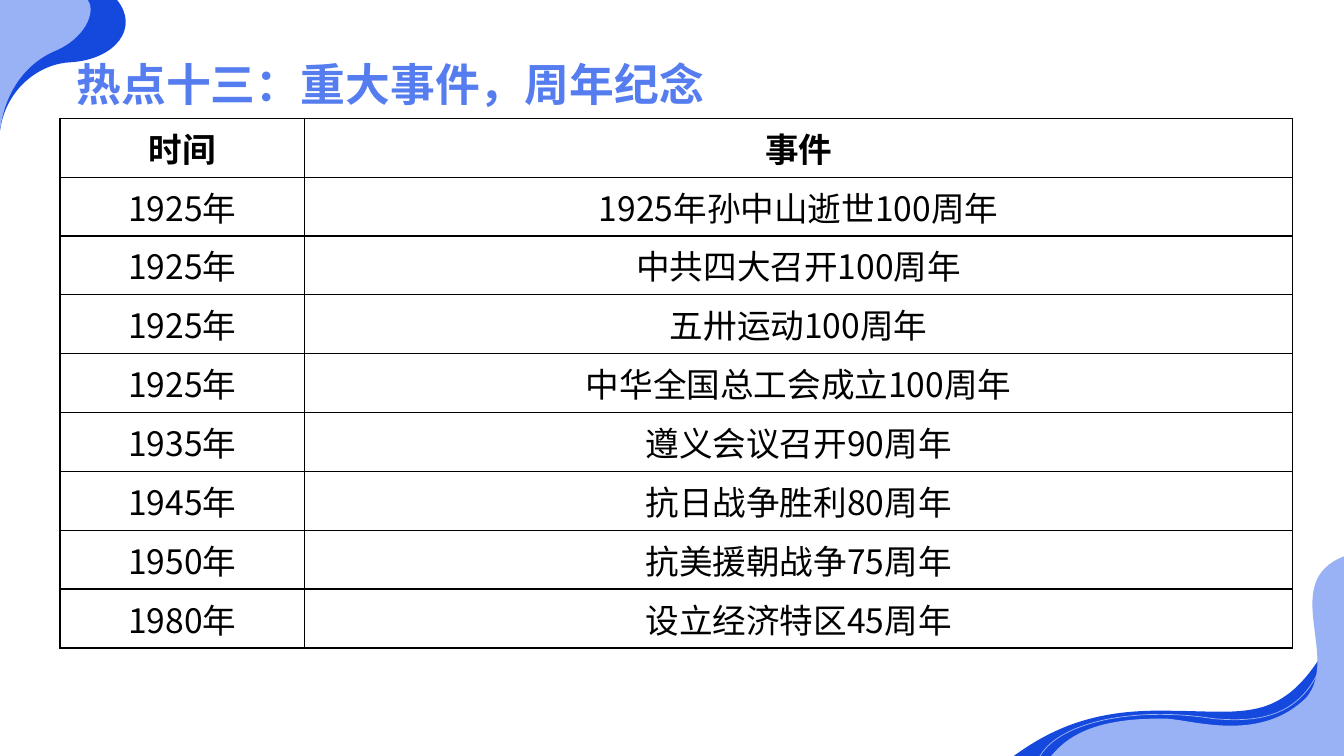
"""Build a slide with a table of historical anniversaries framed by blue waves."""
from lxml import etree
from pptx import Presentation
from pptx import util as u
from pptx.dml.color import RGBColor
from pptx.enum import text
from pptx.oxml import ns

BLUE = RGBColor(0x15, 0x49, 0xDE)
PALE_BLUE = RGBColor(0x99, 0xB1, 0xF5)
TITLE_BLUE = RGBColor(0x55, 0x7D, 0xEF)
BLACK = RGBColor(0, 0, 0)
WHITE = RGBColor(0xFF, 0xFF, 0xFF)
CJK_FONT = "Noto Sans CJK SC"

WAVES = [
    (BLUE, 3.18, (0, 0), [[(2.95, 0)], [(3.53, 0.71), (2.9, 1.5), (1.78, 1.57)],
                          [(1.02, 1.6), (0.15, 2.21), (0, 3.3)], [(0, 0)]]),
    (PALE_BLUE, 2.29, (0, 0), [[(2.21, 0)], [(2.44, 0.3), (2.13, 0.99), (1.35, 1.3)],
                               [(0.74, 1.57), (0.13, 2.21), (0, 3.3)], [(0, 0)]]),
    (BLUE, 8.32, (29.36, 17.91), [[(31.62, 17.91), (32.49, 18.36), (33.87, 15.47)],
                                  [(33.87, 19.05)], [(25.55, 19.05)],
                                  [(26.59, 18.29), (27.69, 17.88), (29.36, 17.91)]]),
    (None, 7.04, (26.21, 19.05), [[(26.75, 18.14), (28.73, 17.81), (30.58, 18.11)],
                                  [(31.52, 18.19), (32.69, 18.16), (33.25, 16.87)]]),
    (PALE_BLUE, 7.38, (29.41, 18.11), [[(30.12, 18.16), (31.78, 18.71), (32.92, 17.58)],
                                       [(33.78, 16.56), (32.23, 14.66), (33.87, 14.02)],
                                       [(33.87, 19.05)], [(26.49, 19.05)],
                                       [(26.95, 18.49), (27.71, 18.08), (29.41, 18.11)]]),
]

EVENTS = [
    ("时间", "事件"),
    ("1925年", "1925年孙中山逝世100周年"),
    ("1925年", "中共四大召开100周年"),
    ("1925年", "五卅运动100周年"),
    ("1925年", "中华全国总工会成立100周年"),
    ("1935年", "遵义会议召开90周年"),
    ("1945年", "抗日战争胜利80周年"),
    ("1950年", "抗美援朝战争75周年"),
    ("1980年", "设立经济特区45周年"),
]


def write(frame, words, size, color, font=CJK_FONT, bold=False,
          align=text.PP_ALIGN.LEFT):
    """Fill a text frame with one formatted paragraph."""
    para = frame.paragraphs[0]
    para.alignment = align
    span = para.add_run()
    span.text = words
    span.font.size = u.Pt(size)
    span.font.bold = bold
    span.font.name = font
    span.font.color.rgb = color
    east_asian = etree.SubElement(span.font._element, ns.qn("a:ea"))
    east_asian.set("typeface", CJK_FONT)


def add_wave(page, width, start, segments, closed):
    """Add an outline of straight lines and true cubic curves, given in cm."""
    builder = page.shapes.build_freeform(u.Cm(start[0]), u.Cm(start[1]))
    ends = [segment[-1] for segment in segments]
    builder.add_line_segments([(u.Cm(x), u.Cm(y)) for x, y in ends], close=closed)
    wave = builder.convert_to_shape()
    wave.shadow.inherit = False
    wave.width = u.Cm(width)
    outline = wave.element.find(".//" + ns.qn("a:path"))
    outline.set("w", str(wave.width))
    for line, segment in zip(outline.findall(ns.qn("a:lnTo")), segments):
        if len(segment) == 3:
            curve = etree.Element(ns.qn("a:cubicBezTo"))
            for x, y in segment:
                etree.SubElement(curve, ns.qn("a:pt"), x=str(u.Cm(x) - wave.left),
                                 y=str(u.Cm(y) - wave.top))
            outline.replace(line, curve)
    return wave


deck = Presentation()
deck.slide_width, deck.slide_height = u.Cm(33.87), u.Cm(19.05)
page = deck.slides.add_slide(deck.slide_layouts[5])

for color, width, start, segments in WAVES:
    wave = add_wave(page, width, start, segments, closed=color is not None)
    if color is not None:
        wave.fill.solid()
        wave.fill.fore_color.rgb = color
        wave.line.fill.background()
    else:
        wave.fill.background()
        wave.line.width = u.Pt(0.5)
        wave.line.color.rgb = WHITE
        tint = wave.line._ln.find(".//" + ns.qn("a:srgbClr"))
        etree.SubElement(tint, ns.qn("a:alpha")).set("val", "60000")

title = page.shapes.title
title.element.getparent().append(title.element)
title.left, title.top = u.Cm(1.93), u.Cm(0.79)
title.width, title.height = u.Cm(25.12), u.Cm(2)
frame = title.text_frame
frame.margin_left = frame.margin_right = frame.margin_top = frame.margin_bottom = 0
frame.vertical_anchor = text.MSO_ANCHOR.BOTTOM
frame.auto_size = text.MSO_AUTO_SIZE.NONE
frame.word_wrap = True
write(frame, "热点十三：重大事件，周年纪念", 32, TITLE_BLUE, font="Arial", bold=True)

table = page.shapes.add_table(len(EVENTS), 2, u.Cm(1.51), u.Cm(2.98),
                              u.Cm(31.06), u.Cm(1.24 * len(EVENTS))).table
table.first_row = table.horz_banding = False
table.columns[0].width, table.columns[1].width = u.Cm(6.17), u.Cm(24.89)
for row, entry in enumerate(EVENTS):
    for column, words in enumerate(entry):
        cell = table.cell(row, column)
        write(cell.text_frame, words, 24, BLACK, bold=row == 0,
              align=text.PP_ALIGN.CENTER)
        props = cell._tc.get_or_add_tcPr()
        for side in ("lnL", "lnR", "lnT", "lnB"):
            border = etree.SubElement(props, ns.qn(f"a:{side}"), w=str(u.Pt(1)))
            paint = etree.SubElement(border, ns.qn("a:solidFill"))
            etree.SubElement(paint, ns.qn("a:srgbClr"), val=str(BLACK))
        cell.fill.background()

deck.save("out.pptx")
